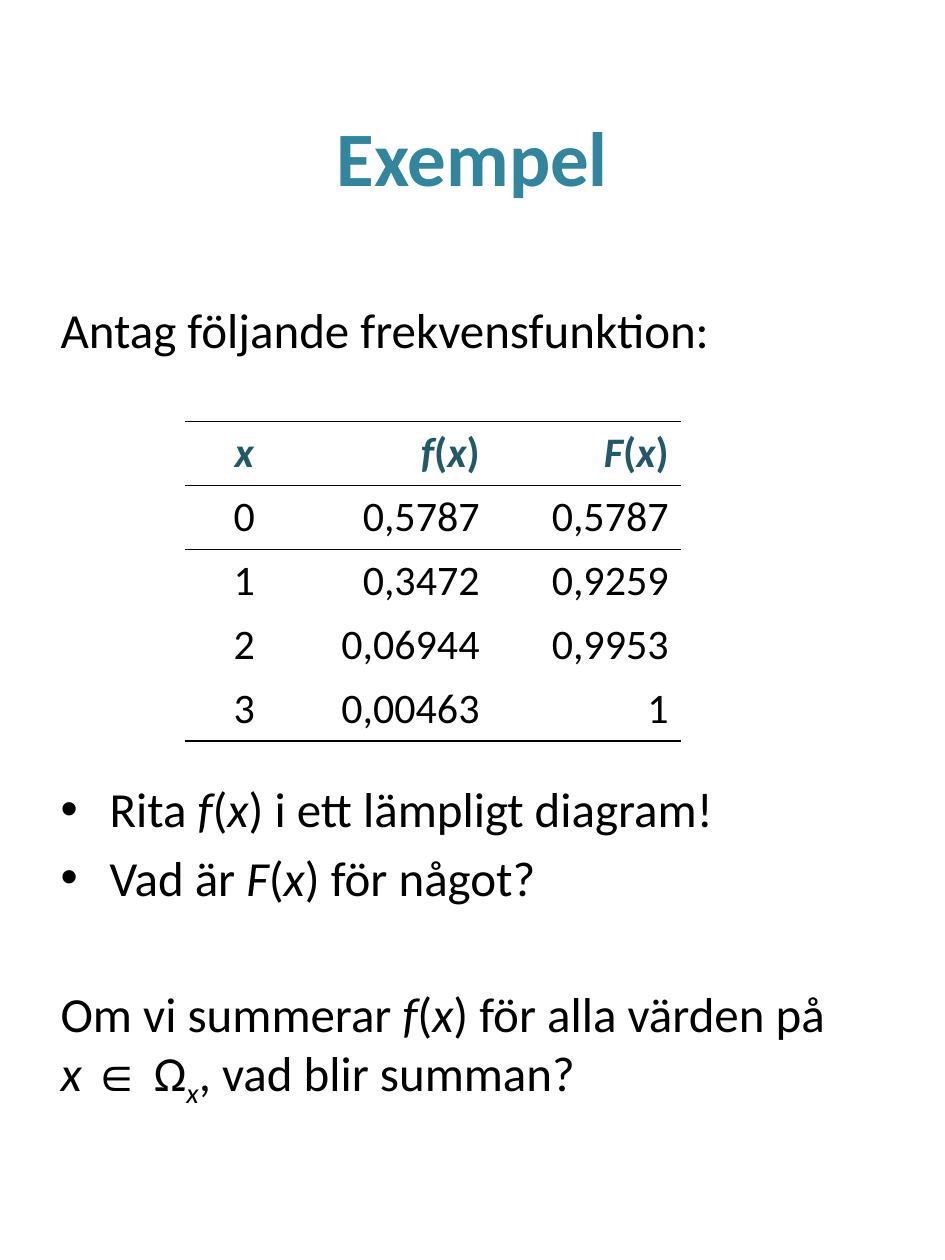
from typing import NamedTuple

from lxml import etree
from pptx import Presentation
from pptx.dml.color import RGBColor
from pptx.enum.text import MSO_ANCHOR, MSO_AUTO_SIZE, PP_ALIGN
from pptx.oxml.ns import qn
from pptx.util import Pt

CENTER, RIGHT = PP_ALIGN.CENTER, PP_ALIGN.RIGHT
MIDDLE = MSO_ANCHOR.MIDDLE
NO_AUTOFIT = MSO_AUTO_SIZE.NONE

TEAL = RGBColor(0x31, 0x85, 0x9C)
DARK_TEAL = RGBColor(0x21, 0x59, 0x68)
BLACK = RGBColor(0, 0, 0)

MAIN_FONT = "Calibri"
SYMBOL_FONT = "Times New Roman"
PLAIN_TABLE_STYLE = "{2D5ABB26-0587-4C30-8999-92F81FD0307C}"
BULLET_INDENT = 28
ROW_HEIGHT = 36.5
COLUMN_WIDTHS = (67.5, 108, 108)
FREQUENCIES = (
    ("*x*", "*f*(*x*)", "*F*(*x*)"),
    ("0", "0,5787", "0,5787"),
    ("1", "0,3472", "0,9259"),
    ("2", "0,06944", "0,9953"),
    ("3", "0,00463", "1"),
)


class Piece(NamedTuple):
    text: str
    font: str = MAIN_FONT
    baseline: int = 0


class Line(NamedTuple):
    pieces: tuple[Piece, ...]
    bullet: bool = False
    space_before: float | None = None


BODY_LINES = (
    Line((Piece("Antag följande frekvensfunktion:"),)),
    Line((Piece("Rita *f*(*x*) i ett lämpligt diagram!"),), bullet=True, space_before=240),
    Line((Piece("Vad är *F*(*x*) för något?"),), bullet=True),
    Line(
        (
            Piece("Om vi summerar *f*(*x*) för alla värden på *x *"),
            Piece("∈ ", font=SYMBOL_FONT),
            Piece("Ω"),
            Piece("*x*", baseline=-25),
            Piece(", vad blir summan?"),
        ),
        space_before=44,
    ),
)


def add_text(paragraph, text: str, *, size: float, color: RGBColor = BLACK,
             bold: bool = False, font: str = MAIN_FONT, baseline: int = 0) -> None:
    """Add text to a paragraph; parts between asterisks are italic."""
    for index, part in enumerate(text.split("*")):
        if not part:
            continue
        run = paragraph.add_run()
        run.text = part
        run.font.name = font
        run.font.size = Pt(size)
        run.font.bold = bold
        run.font.italic = index % 2 == 1
        run.font.color.rgb = color
        if baseline:
            run.font._element.set("baseline", str(baseline * 1000))


def place(shape, left: float, top: float, width: float, height: float) -> None:
    shape.left, shape.top = Pt(left), Pt(top)
    shape.width, shape.height = Pt(width), Pt(height)


def set_bullet(paragraph, bullet: bool) -> None:
    properties = paragraph._p.get_or_add_pPr()
    indent = Pt(BULLET_INDENT) if bullet else 0
    properties.set("marL", str(indent))
    properties.set("indent", str(-indent))
    if bullet:
        etree.SubElement(properties, qn("a:buChar"), char="•")
    else:
        etree.SubElement(properties, qn("a:buNone"))


def add_rule(cell, side: str) -> None:
    """Draw a thin black border on one side of a cell, before its fill is set."""
    border = etree.SubElement(cell._tc.get_or_add_tcPr(), qn(f"a:{side}"), w=str(Pt(1)))
    fill = etree.SubElement(border, qn("a:solidFill"))
    etree.SubElement(fill, qn("a:srgbClr"), val=str(BLACK))


def add_body(body) -> None:
    place(body, 27.4, 167.8, 469.4, 517)
    frame = body.text_frame
    frame.auto_size = NO_AUTOFIT
    for index, line in enumerate(BODY_LINES):
        paragraph = frame.add_paragraph() if index else frame.paragraphs[0]
        if line.space_before is not None:
            paragraph.space_before = Pt(line.space_before)
        set_bullet(paragraph, line.bullet)
        for piece in line.pieces:
            add_text(paragraph, piece.text, size=28, font=piece.font, baseline=piece.baseline)


def add_frequency_table(slide) -> None:
    row_count = len(FREQUENCIES)
    table = slide.shapes.add_table(
        row_count, len(COLUMN_WIDTHS), Pt(105.8), Pt(241),
        Pt(sum(COLUMN_WIDTHS)), Pt(ROW_HEIGHT * row_count),
    ).table
    table._tbl.tblPr.find(qn("a:tableStyleId")).text = PLAIN_TABLE_STYLE
    table.horz_banding = False
    table.first_row = False
    for column, width in zip(table.columns, COLUMN_WIDTHS):
        column.width = Pt(width)
    for row, values in enumerate(FREQUENCIES):
        table.rows[row].height = Pt(ROW_HEIGHT)
        header = row == 0
        for column, value in enumerate(values):
            cell = table.cell(row, column)
            cell.vertical_anchor = MIDDLE
            if row <= 1:
                add_rule(cell, "lnT")
            if header or row == row_count - 1:
                add_rule(cell, "lnB")
            cell.fill.background()
            paragraph = cell.text_frame.paragraphs[0]
            paragraph.alignment = RIGHT if column else CENTER
            add_text(paragraph, value, size=24, bold=header,
                     color=DARK_TEAL if header else BLACK)


def main() -> None:
    presentation = Presentation()
    presentation.slide_width, presentation.slide_height = Pt(540), Pt(720)
    slide = presentation.slides.add_slide(presentation.slide_layouts[1])

    title = slide.shapes.title
    place(title, 27, 28.8, 486, 120)
    title.text_frame.vertical_anchor = MIDDLE
    heading = title.text_frame.paragraphs[0]
    heading.alignment = CENTER
    add_text(heading, "Exempel", size=44, color=TEAL, bold=True)

    add_body(slide.placeholders[1])
    add_frequency_table(slide)
    presentation.save("out.pptx")


if __name__ == "__main__":
    main()
